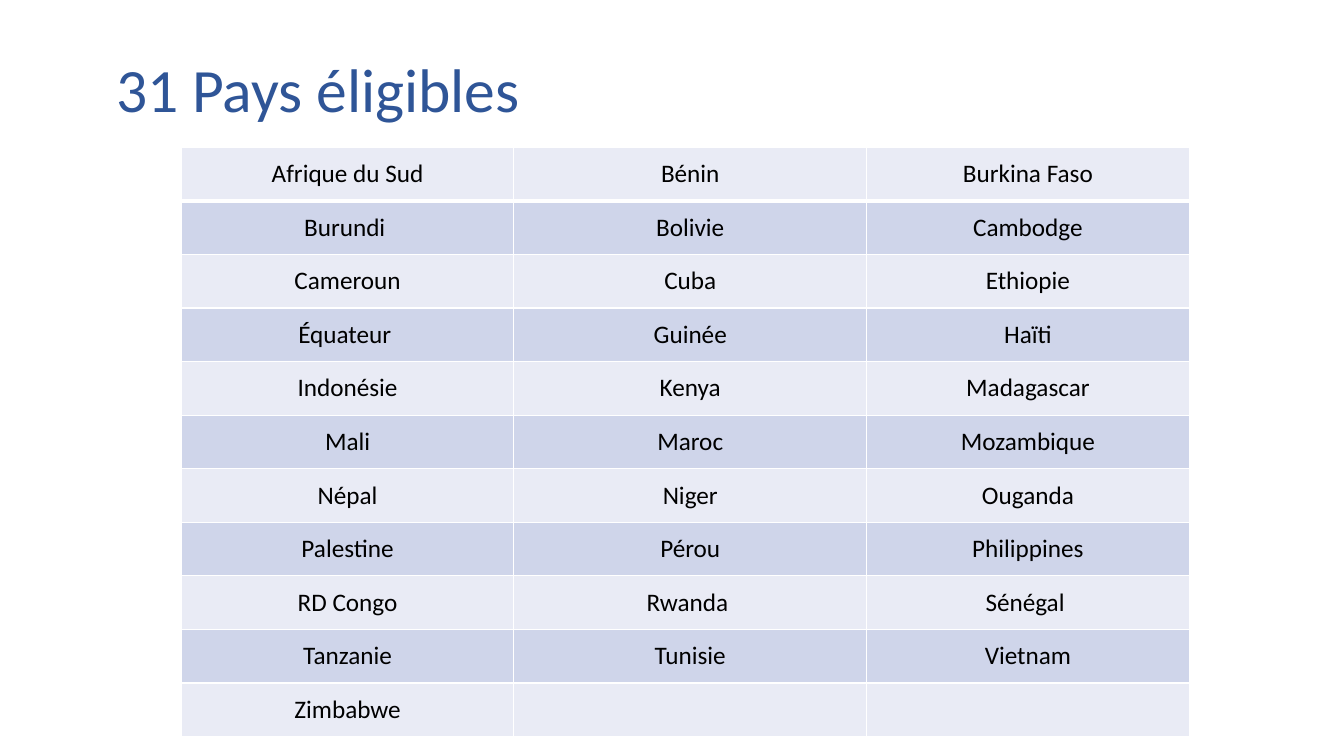
import pptx
import pptx.dml.color
import pptx.enum.text
import pptx.oxml
import pptx.oxml.ns
import pptx.util
from pptx.util import Cm

# Content
TITLE = "31 Pays éligibles"
COUNTRIES = [
    ("Afrique du Sud", "Bénin", "Burkina Faso"),
    ("Burundi ", "Bolivie", "Cambodge"),
    ("Cameroun", "Cuba", "Ethiopie"),
    ("Équateur ", "Guinée", "Haïti"),
    ("Indonésie", "Kenya", "Madagascar"),
    ("Mali", "Maroc", "Mozambique"),
    ("Népal", "Niger", "Ouganda"),
    ("Palestine", "Pérou", "Philippines"),
    ("RD Congo", "Rwanda ", "Sénégal "),
    ("Tanzanie", "Tunisie", "Vietnam"),
    ("Zimbabwe", "", ""),
]

# Format values
COLUMN_WIDTHS = [Cm(8.38), Cm(8.89), Cm(8.13)]
ROW_HEIGHT = Cm(1.35)
BANDS = ["E9EBF5", "CFD5EA"]
BORDER = "FFFFFF"
TITLE_BOX = {"left": Cm(2.67), "top": Cm(0.48), "width": Cm(29.21), "height": Cm(3.68)}
TITLE_FONT = {"name": "Calibri", "size": pptx.util.Pt(44)}
COUNTRY_FONT = {"name": "Calibri", "size": pptx.util.Pt(18)}
MIDDLE = pptx.enum.text.MSO_ANCHOR.MIDDLE
ALIGN = pptx.enum.text.PP_ALIGN


def rgb(hex_color):
    return pptx.dml.color.RGBColor.from_string(hex_color)


def set_all(target, values):
    for name, value in values.items():
        setattr(target, name, value)


def write(paragraph, text, font, color, align):
    paragraph.text = text
    paragraph.alignment = align
    set_all(paragraph.font, font)
    paragraph.font.color.rgb = rgb(color)


def add_border(cell, side, points):
    cell._tc.get_or_add_tcPr().append(pptx.oxml.parse_xml(
        f'<a:ln{side} {pptx.oxml.ns.nsdecls("a")} w="{pptx.util.Pt(points)}">'
        f'<a:solidFill><a:srgbClr val="{BORDER}"/></a:solidFill></a:ln{side}>'))


deck = pptx.Presentation()
set_all(deck, {"slide_width": Cm(33.87), "slide_height": Cm(19.05)})
slide = deck.slides.add_slide(deck.slide_layouts[5])

# Title
heading = slide.shapes.title
set_all(heading, TITLE_BOX)
set_all(heading.text_frame, {"vertical_anchor": MIDDLE, "word_wrap": True})
write(heading.text_frame.paragraphs[0], TITLE, TITLE_FONT, "2F5597", ALIGN.LEFT)
heading.text_frame.paragraphs[0].line_spacing = 0.9

# Country table
countries = slide.shapes.add_table(
    len(COUNTRIES), len(COLUMN_WIDTHS), Cm(4.57), Cm(3.71),
    sum(COLUMN_WIDTHS), ROW_HEIGHT * len(COUNTRIES)).table
set_all(countries, {"first_row": False, "horz_banding": False})
for column, width in zip(countries.columns, COLUMN_WIDTHS):
    column.width = width

for row, names in enumerate(COUNTRIES):
    countries.rows[row].height = ROW_HEIGHT
    # The line under the first row is thicker
    borders = {"L": 1, "R": 1, "T": 3 if row == 1 else 1, "B": 3 if row == 0 else 1}
    for col, country in enumerate(names):
        cell = countries.cell(row, col)
        cell.vertical_anchor = MIDDLE
        for side, points in borders.items():
            add_border(cell, side, points)
        cell.fill.solid()
        cell.fill.fore_color.rgb = rgb(BANDS[row % 2])
        write(cell.text_frame.paragraphs[0], country, COUNTRY_FONT, "000000", ALIGN.CENTER)

deck.save("out.pptx")
